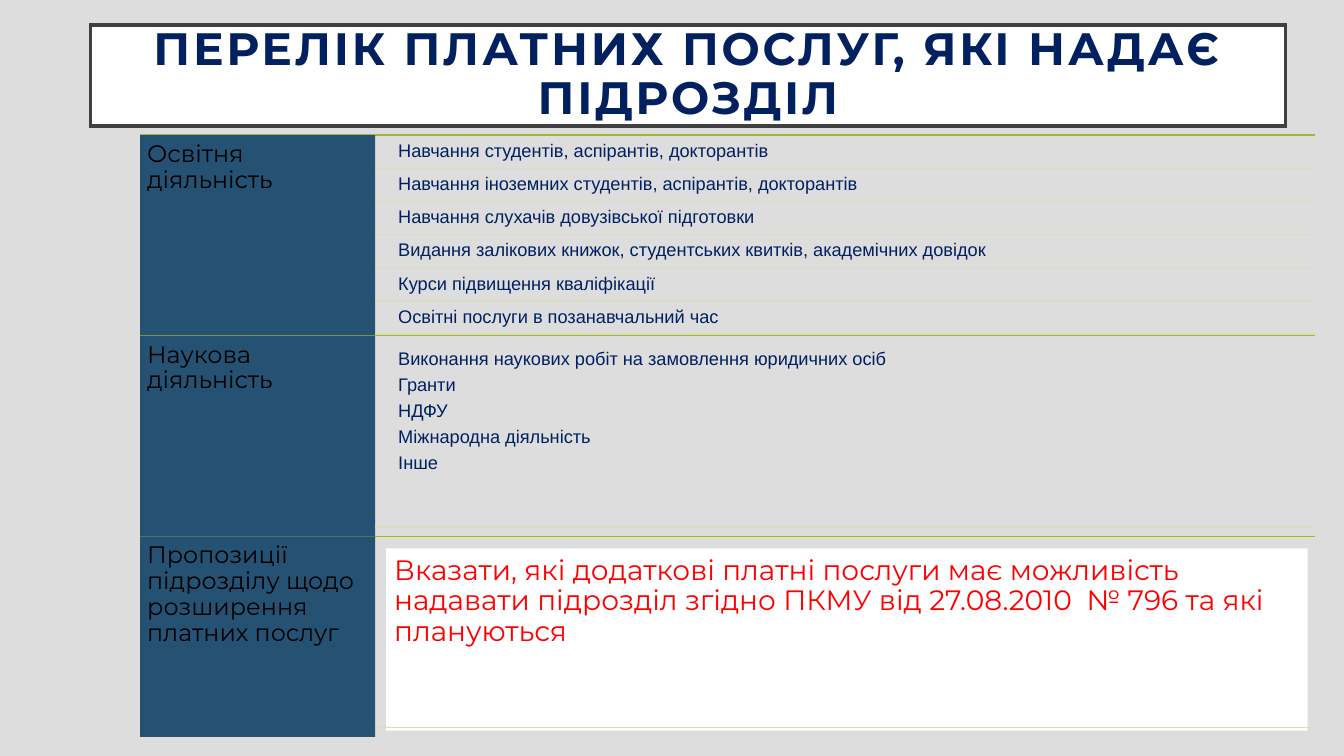
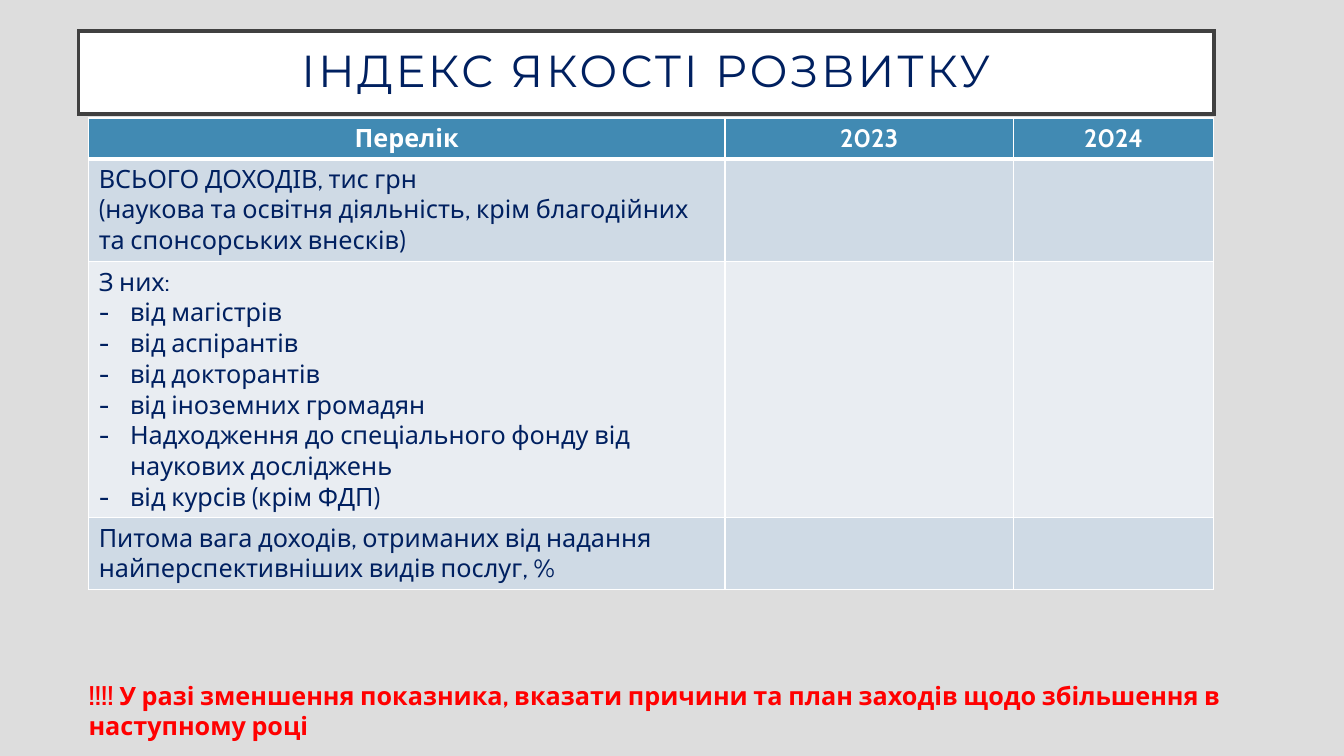
from dataclasses import dataclass

from lxml import etree
from pptx import Presentation
from pptx.dml.color import RGBColor
from pptx.enum.shapes import MSO_CONNECTOR, MSO_SHAPE
from pptx.enum.text import MSO_ANCHOR, MSO_AUTO_SIZE, PP_ALIGN
from pptx.oxml.ns import qn
from pptx.util import Emu, Pt

LEFT, CENTER = PP_ALIGN.LEFT, PP_ALIGN.CENTER
TOP, MIDDLE = MSO_ANCHOR.TOP, MSO_ANCHOR.MIDDLE
NO_FIT, GROW = MSO_AUTO_SIZE.NONE, MSO_AUTO_SIZE.SHAPE_TO_FIT_TEXT
STRAIGHT, RECTANGLE = MSO_CONNECTOR.STRAIGHT, MSO_SHAPE.RECTANGLE
TITLE_ONLY = 5
EMU_PER_PX = 9144  # 100 px to the inch


@dataclass(frozen=True)
class Theme:
    background: str = "DDDDDD"
    white: str = "FFFFFF"
    black: str = "000000"
    navy: str = "002060"
    red: str = "FF0000"
    frame: str = "404040"
    label_fill: str = "255272"
    section_rule: str = "A6B727"
    item_rule: str = "D8DFBE"
    header_fill: str = "418AB3"
    row_fills: tuple = ("CFDAE5", "E9EDF2")
    heading_font: str = "Montserrat"
    item_font: str = "Arial"
    table_font: str = "Cabin"
    title_size: float = 32
    long_title_size: float = 32.4
    label_size: float = 17
    item_size: float = 13
    proposal_size: float = 20
    table_size: float = 18


THEME = Theme()

SERVICES_TITLE = "ПЕРЕЛІК ПЛАТНИХ ПОСЛУГ, ЯКІ НАДАЄ ПІДРОЗДІЛ"
# Each section: label, then boxes; each box is a list of paragraphs.
SECTIONS = [
    ("Освітня діяльність", [
        ["Навчання студентів, аспірантів, докторантів"],
        ["Навчання іноземних студентів, аспірантів, докторантів"],
        ["Навчання слухачів довузівської підготовки"],
        ["Видання залікових книжок, студентських квитків, академічних довідок"],
        ["Курси підвищення кваліфікації"],
        ["Освітні послуги в позанавчальний час"],
    ]),
    ("Наукова діяльність", [
        ["Виконання наукових робіт на замовлення юридичних осіб",
         "Гранти", "НДФУ", "Міжнародна діяльність", "Інше"],
    ]),
    ("Пропозиції підрозділу щодо розширення платних послуг", [
        ["Вказати, які додаткові платні послуги має можливість надавати "
         "підрозділ згідно ПКМУ від 27.08.2010  № 796 та які плануються"],
    ]),
]
SECTIONS_TOP, SECTION_HEIGHT = 134, 199
LABEL_LEFT, LABEL_WIDTH = 139, 233
ITEM_LEFT, PANEL_LEFT, ITEM_WIDTH = 390, 383, 914
PANEL_DROP = 3  # the panel reaches a little below its rule
RULE_RIGHT = 1304
GAP_SHARE = 0.05  # gap between boxes, as a share of box height

INDEX_TITLE = "ІНДЕКС ЯКОСТІ РОЗВИТКУ"
INDEX_HEADER = ["Перелік", "2023", "2024"]
INDEX_ROWS = [
    ["ВСЬОГО ДОХОДІВ, тис грн",
     "(наукова та освітня діяльність, крім благодійних та спонсорських внесків)"],
    ["З них:", "- від магістрів", "- від аспірантів", "- від докторантів",
     "- від іноземних громадян",
     "- Надходження до спеціального фонду від наукових досліджень",
     "- від курсів (крім ФДП)"],
    ["Питома вага доходів, отриманих від надання найперспективніших видів послуг, %"],
]
INDEX_COLUMNS = [631, 286, 199]
INDEX_HEIGHTS = [40, 102, 254, 71]
INDEX_LEFT, INDEX_TOP = 88, 117
WARNING = ("!!!! У разі зменшення показника, вказати причини та план заходів "
           "щодо збільшення в наступному році")
BULLET = "- "
BULLET_INDENT = 31


def px(length):
    return Emu(round(length * EMU_PER_PX))


def color(value):
    return RGBColor.from_string(value)


def write(frame, lines, *, size, font, fill, bold=False, align=LEFT,
          spacing=None, after=None, tracking=None):
    """Fill a text frame; a line starting with the bullet mark becomes a bullet."""
    for number, line in enumerate(lines):
        para = frame.paragraphs[0] if number == 0 else frame.add_paragraph()
        para.alignment = align
        if spacing:
            para.line_spacing = spacing
        if after is not None:
            para.space_after = Pt(after)
        if line.startswith(BULLET):
            add_bullet(para, font)
        span = para.add_run()
        span.text = line.removeprefix(BULLET)
        span.font.size = Pt(size)
        span.font.name = font
        span.font.bold = bold
        span.font.color.rgb = color(fill)
        if tracking:
            span.font._element.set("spc", str(tracking * 100))


def add_bullet(para, font):
    properties = para._p.get_or_add_pPr()
    properties.set("marL", str(px(BULLET_INDENT)))
    properties.set("indent", str(-px(BULLET_INDENT)))
    etree.SubElement(properties, qn("a:buFont")).set("typeface", font)
    etree.SubElement(properties, qn("a:buChar")).set("char", BULLET.strip())


def set_frame(frame, inset, anchor=TOP, fit=NO_FIT):
    frame.word_wrap = True
    frame.auto_size = fit
    frame.vertical_anchor = anchor
    frame.margin_left = frame.margin_right = px(inset)
    frame.margin_top = frame.margin_bottom = px(inset)


def add_text(page, lines, left, top, width, height, *, inset, fit=NO_FIT, **style):
    box = page.shapes.add_textbox(px(left), px(top), px(width), px(height))
    set_frame(box.text_frame, inset, fit=fit)
    write(box.text_frame, lines, **style)


def add_block(page, left, top, width, height, fill):
    block = page.shapes.add_shape(RECTANGLE, px(left), px(top), px(width), px(height))
    block.shadow.inherit = False
    block.fill.solid()
    block.fill.fore_color.rgb = color(fill)
    block.line.fill.background()


def add_rule(page, left, top, fill):
    rule = page.shapes.add_connector(STRAIGHT, px(left), px(top), px(RULE_RIGHT), px(top))
    rule.line.color.rgb = color(fill)
    rule.line.width = Pt(1)
    etree.SubElement(rule._element.spPr, qn("a:effectLst"))


def add_page(deck, title, left, top, width, height, **style):
    page = deck.slides.add_slide(deck.slide_layouts[TITLE_ONLY])
    box = page.shapes.title
    box.left, box.top, box.width, box.height = map(px, (left, top, width, height))
    box.fill.solid()
    box.fill.fore_color.rgb = color(THEME.white)
    box.line.color.rgb = color(THEME.frame)
    box.line.width = Pt(2.5)
    etree.SubElement(box.line._get_or_add_ln(), qn("a:miter")).set("lim", "800000")
    set_frame(box.text_frame, 20, MIDDLE)
    write(box.text_frame, [title], font=THEME.heading_font, fill=THEME.navy,
          align=CENTER, spacing=0.9, tracking=2, **style)
    return page


def add_section(page, top, label, boxes, is_proposal):
    """Draw a label block and its boxes, spread evenly over the section height."""
    add_rule(page, LABEL_LEFT, top, THEME.section_rule)
    area = (LABEL_LEFT, top, LABEL_WIDTH, SECTION_HEIGHT)
    add_block(page, *area, THEME.label_fill)
    add_text(page, [label], *area, inset=7, size=THEME.label_size,
             font=THEME.heading_font, fill=THEME.black, spacing=0.9)

    count = len(boxes)
    height = SECTION_HEIGHT / (count + GAP_SHARE * (count + 1))
    gap = height * GAP_SHARE
    if is_proposal:
        left, drop = PANEL_LEFT, PANEL_DROP
        style = dict(inset=8, size=THEME.proposal_size,
                     font=THEME.heading_font, fill=THEME.red)
    else:
        left, drop = ITEM_LEFT, 0
        style = dict(inset=5, size=THEME.item_size,
                     font=THEME.item_font, fill=THEME.navy)
    for number, lines in enumerate(boxes):
        box_top = top + gap + number * (height + gap)
        area = (left, box_top + drop, ITEM_WIDTH, height)
        if is_proposal:
            add_block(page, *area, THEME.white)
        add_text(page, lines, *area, spacing=0.9, after=4.6, **style)
        add_rule(page, LABEL_LEFT + LABEL_WIDTH, box_top + height, THEME.item_rule)


def style_cell(cell, fill, top_width, bottom_width):
    """Set the fill and the white borders, widths in points."""
    cell.fill.solid()
    cell.fill.fore_color.rgb = color(fill)
    properties = cell._tc.get_or_add_tcPr()
    borders = {"a:lnL": 1, "a:lnR": 1, "a:lnT": top_width, "a:lnB": bottom_width}
    for position, (tag, width) in enumerate(borders.items()):
        border = etree.Element(qn(tag), w=str(Pt(width)))
        solid = etree.SubElement(border, qn("a:solidFill"))
        etree.SubElement(solid, qn("a:srgbClr")).set("val", THEME.white)
        properties.insert(position, border)


def add_index_table(page):
    rows = [[[name] for name in INDEX_HEADER]]
    rows += [[lines, [], []] for lines in INDEX_ROWS]
    table = page.shapes.add_table(
        len(rows), len(INDEX_COLUMNS), px(INDEX_LEFT), px(INDEX_TOP),
        px(sum(INDEX_COLUMNS)), px(sum(INDEX_HEIGHTS))).table
    for column, width in zip(table.columns, INDEX_COLUMNS):
        column.width = px(width)
    for number, (row, height) in enumerate(zip(rows, INDEX_HEIGHTS)):
        table.rows[number].height = px(height)
        is_header = number == 0
        fill = THEME.header_fill if is_header else THEME.row_fills[(number - 1) % 2]
        for cell, lines in zip(table.rows[number].cells, row):
            style_cell(cell, fill, 3 if number == 1 else 1, 3 if is_header else 1)
            write(cell.text_frame, lines, size=THEME.table_size,
                  font=THEME.table_font, bold=is_header,
                  fill=THEME.white if is_header else THEME.navy,
                  align=CENTER if is_header else LEFT)


def build_services(deck):
    page = add_page(deck, SERVICES_TITLE, 90, 25, 1185, 100,
                    size=THEME.long_title_size, bold=True)
    for number, (label, boxes) in enumerate(SECTIONS):
        add_section(page, SECTIONS_TOP + number * SECTION_HEIGHT, label, boxes,
                    is_proposal=number == len(SECTIONS) - 1)


def build_index(deck):
    page = add_page(deck, INDEX_TITLE, 78, 31, 1126, 82, size=THEME.title_size)
    add_index_table(page)
    add_text(page, [WARNING], 78, 665, 1177, 81, inset=10, fit=GROW,
             size=THEME.table_size, font=THEME.table_font, fill=THEME.red, bold=True)


def main():
    deck = Presentation()
    deck.slide_width, deck.slide_height = px(1333), px(750)
    backdrop = deck.slide_master.background.fill
    backdrop.solid()
    backdrop.fore_color.rgb = color(THEME.background)
    build_services(deck)
    build_index(deck)
    deck.save("out.pptx")


if __name__ == "__main__":
    main()
